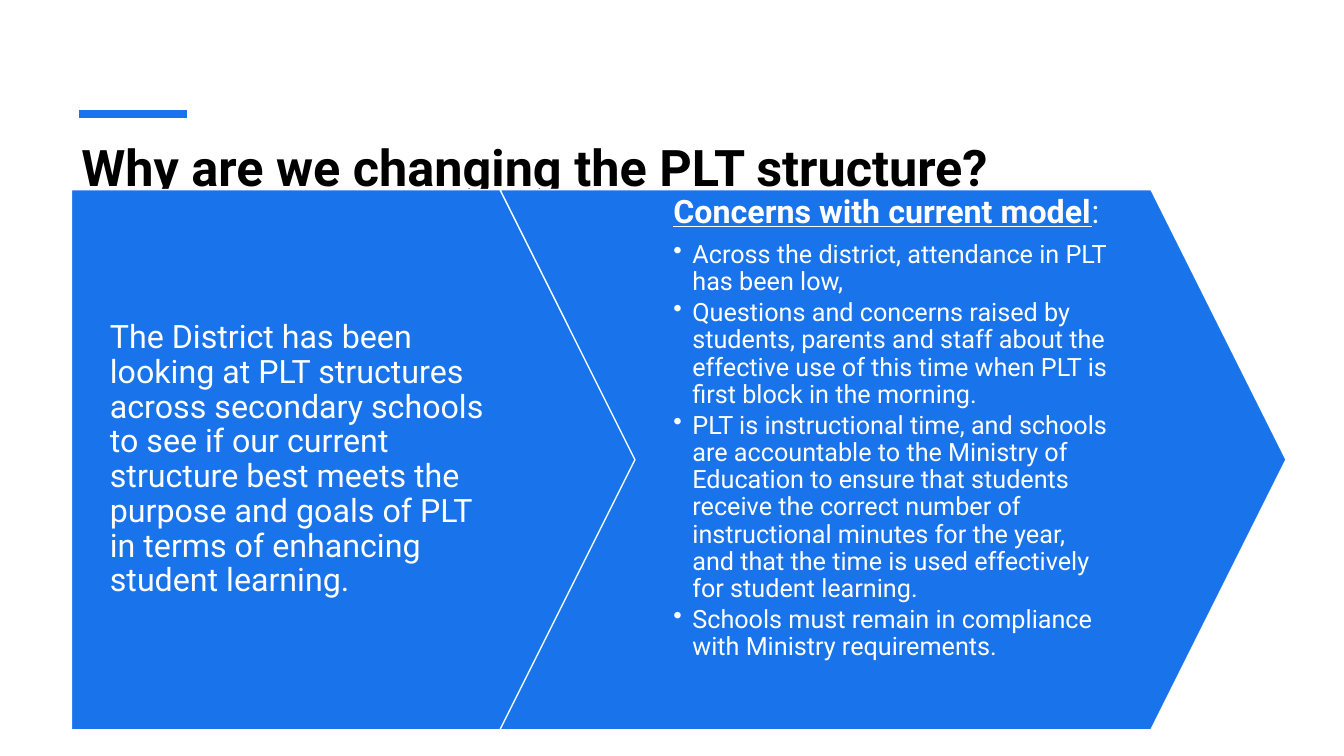
from dataclasses import dataclass

from lxml import etree
from pptx import Presentation
from pptx.dml.color import RGBColor
from pptx.enum.shapes import MSO_CONNECTOR, MSO_SHAPE
from pptx.enum.text import MSO_ANCHOR
from pptx.oxml.ns import qn
from pptx.util import Cm, Pt

STRAIGHT = MSO_CONNECTOR.STRAIGHT
PENTAGON = MSO_SHAPE.PENTAGON
CHEVRON = MSO_SHAPE.CHEVRON
TOP = MSO_ANCHOR.TOP
MIDDLE = MSO_ANCHOR.MIDDLE


@dataclass(frozen=True)
class Theme:
    font: str = "Roboto"
    blue: RGBColor = RGBColor(0x19, 0x73, 0xEB)
    white: RGBColor = RGBColor(0xFF, 0xFF, 0xFF)
    black: RGBColor = RGBColor(0x00, 0x00, 0x00)
    title_size: Pt = Pt(36)
    lead_size: Pt = Pt(23)
    bullet_size: Pt = Pt(18)


theme = Theme()


def add_box(left, top, width, height, insets, anchor):
    """Add a wrapping text box; measures in cm, insets as left, top, right, bottom."""
    frame = page.shapes.add_textbox(Cm(left), Cm(top), Cm(width), Cm(height)).text_frame
    frame.word_wrap = True
    frame.vertical_anchor = anchor
    frame.margin_left, frame.margin_top, frame.margin_right, frame.margin_bottom = map(Cm, insets)
    return frame


def add_span(para, text, size, color, bold=False, underline=False):
    span = para.add_run()
    span.text = text
    font = span.font
    font.name, font.size, font.color.rgb = theme.font, size, color
    font.bold, font.underline = bold, underline


deck = Presentation()
deck.slide_width, deck.slide_height = Cm(33.87), Cm(19.05)
page = deck.slides.add_slide(deck.slide_layouts[6])

# Accent bar above the title
accent = page.shapes.add_connector(STRAIGHT, Cm(1.99), Cm(2.87), Cm(4.71), Cm(2.87))
accent.line.color.rgb = theme.blue
accent.line.width = Pt(6)
etree.SubElement(accent.element.spPr, qn("a:effectLst"))

# Title
title = add_box(1.8, 3.2, 30.25, 3.05, (0.25, 0.23, 0.25, 0.13), TOP)
add_span(title.paragraphs[0], "Why are we changing the PLT structure?",
         theme.title_size, theme.black, bold=True)

# Two interlocking arrows
arrow_top, arrow_height = 4.78, 13.61
for kind, left, width in ((PENTAGON, 1.8, 16.31), (CHEVRON, 12.6, 19.81)):
    arrow = page.shapes.add_shape(kind, Cm(left), Cm(arrow_top), Cm(width), Cm(arrow_height))
    arrow.adjustments[0] = 0.25
    arrow.shadow.inherit = False
    arrow.fill.solid()
    arrow.fill.fore_color.rgb = theme.blue
    arrow.line.color.rgb = theme.white
    arrow.line.width = Pt(1)

# Left arrow: background
background = add_box(1.8, arrow_top, 14.61, arrow_height, (0.97, 0.15, 3.91, 0.15), MIDDLE)
para = background.paragraphs[0]
para.line_spacing = 0.9
add_span(para, "The District has been looking at PLT structures across secondary schools "
         "to see if our current structure best meets the purpose and goals of PLT "
         "in terms of enhancing student learning.", theme.lead_size, theme.white)

# Right arrow: heading
concerns = add_box(16, arrow_top, 12.98, arrow_height, (0.97, 0.15, 0.97, 0.15), TOP)
heading = concerns.paragraphs[0]
heading.line_spacing = 0.9
heading.space_after = Pt(8)
add_span(heading, "Concerns with current model", theme.lead_size, theme.white,
         bold=True, underline=True)
add_span(heading, ":", theme.lead_size, theme.white)

# Right arrow: bulleted concerns
concern_texts = (
    "Across the district, attendance in PLT has been low,",
    "Questions and concerns raised by students, parents and staff about the effective use "
    "of this time when PLT is first block in the morning.",
    "PLT is instructional time, and schools are accountable to the Ministry of Education "
    "to ensure that students receive the correct number of instructional minutes for the "
    "year, and that the time is used effectively for student learning.",
    "Schools must remain in compliance with Ministry requirements.",
)
for text in concern_texts:
    para = concerns.add_paragraph()
    para.level = 1
    para.line_spacing = 0.9
    para.space_after = Pt(2.7)
    props = para._p.get_or_add_pPr()
    props.set("marL", str(Cm(0.48)))
    props.set("indent", str(Cm(-0.48)))
    etree.SubElement(props, qn("a:buChar"), char="•")
    add_span(para, text, theme.bullet_size, theme.white)

deck.save("out.pptx")
